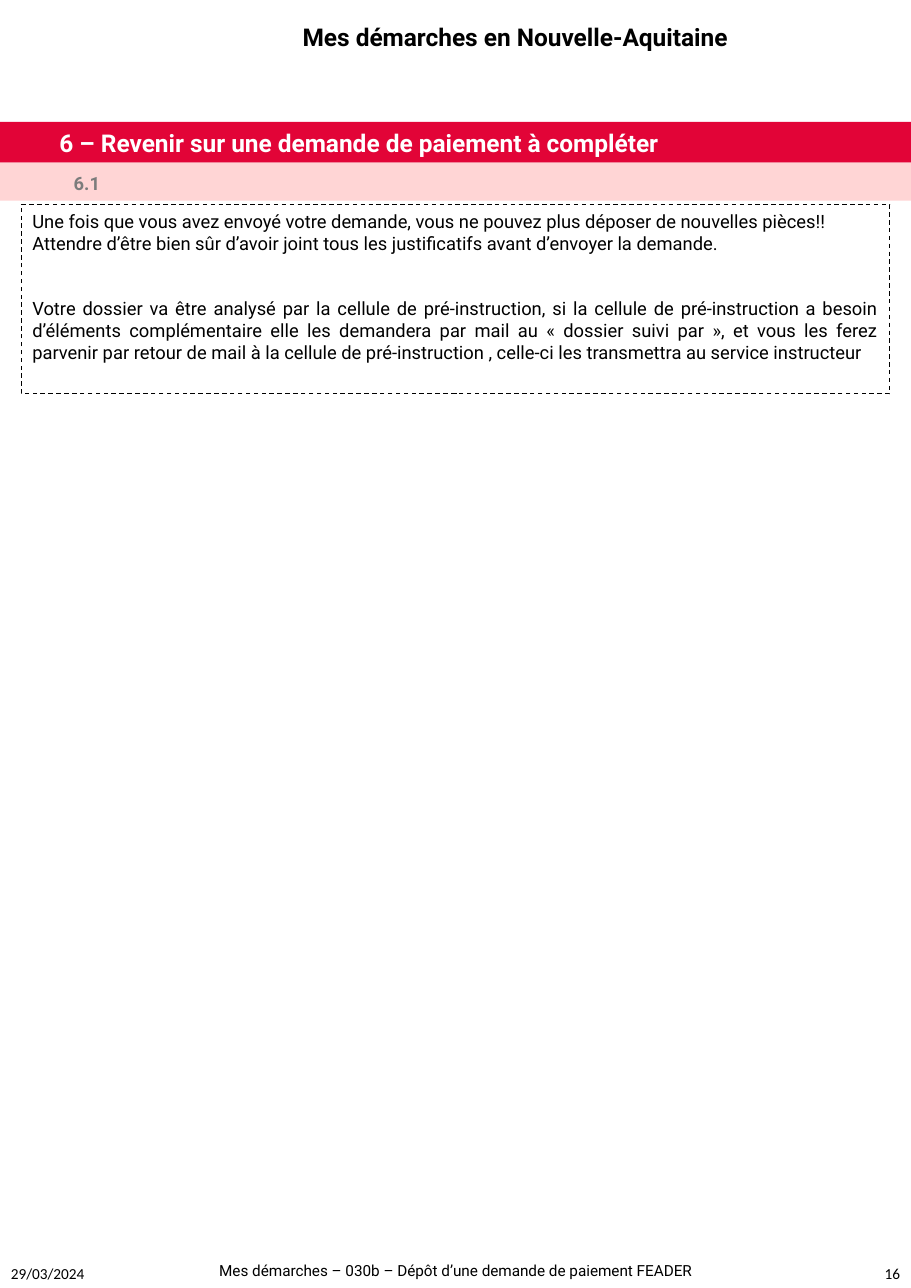
import pptx
import pptx.dml.color
import pptx.enum.dml
import pptx.enum.shapes
import pptx.enum.text
import pptx.oxml.ns
import pptx.util
from lxml import etree

Cm = pptx.util.Cm
Pt = pptx.util.Pt
ALIGN = pptx.enum.text.PP_ALIGN
ANCHOR = pptx.enum.text.MSO_ANCHOR

THEME = {
    "colors": {"black": "000000", "white": "FFFFFF", "red": "E20437",
               "pink": "FFD5D5", "grey": "7C7C7C"},
    "sizes": {"heading": Pt(16), "body": Pt(12), "footer": Pt(10)},
    "fonts": {"main": "Roboto", "footer": "Calibri"},
}


def color(name):
    return pptx.dml.color.RGBColor.from_string(THEME["colors"][name])


def write(shape, lines, size, ink="black", bold=False, font="main", frame_format=None, **paragraph_format):
    frame = shape.text_frame
    frame_values = {"word_wrap": True, "auto_size": pptx.enum.text.MSO_AUTO_SIZE.NONE,
                    "vertical_anchor": ANCHOR.TOP, **(frame_format or {})}
    for name, value in frame_values.items():
        setattr(frame, name, value)
    font_values = {"size": THEME["sizes"][size], "name": THEME["fonts"][font], "bold": bold}
    for index, (line, space_before) in enumerate(lines):
        paragraph = frame.add_paragraph() if index else frame.paragraphs[0]
        paragraph_values = {"alignment": ALIGN.LEFT, "space_before": Pt(space_before), **paragraph_format}
        for name, value in paragraph_values.items():
            setattr(paragraph, name, value)
        run = paragraph.add_run()
        run.text = line
        for name, value in font_values.items():
            setattr(run.font, name, value)
        run.font.color.rgb = color(ink)


presentation = pptx.Presentation()
presentation.slide_width = Cm(21)
presentation.slide_height = Cm(29.7)
slide = presentation.slides.add_slide(presentation.slide_layouts[1])
title, notice = slide.placeholders

header = slide.shapes.add_textbox(Cm(4.11), Cm(0.05), Cm(12.67), Cm(1.07))
no_margins = {f"margin_{side}": 0 for side in ("left", "top", "right", "bottom")}
write(header, [("Mes démarches en Nouvelle-Aquitaine", 0)], "heading", bold=True,
      frame_format=no_margins, alignment=ALIGN.RIGHT, line_spacing=Pt(32.4))

footers = [
    ("Mes démarches – 030b – Dépôt d’une demande de paiement FEADER",
     0.53, 28.96, 19.94, "main", ALIGN.CENTER),
    ("29/03/2024", 0, 29.03, 4.72, "footer", ALIGN.LEFT),
    ("16", 18.46, 29.03, 2.54, "footer", ALIGN.RIGHT),
]
for text, left, top, width, font, alignment in footers:
    footer = slide.shapes.add_textbox(Cm(left), Cm(top), Cm(width), Cm(0.69))
    write(footer, [(text, 0)], "footer", font=font, alignment=alignment)

placements = [(title, 0, 2.81, 21, 0.94), (notice, 0.49, 4.71, 20.02, 4.37)]
for placeholder, *box in placements:
    for name, value in zip(("left", "top", "width", "height"), box):
        setattr(placeholder, name, Cm(value))

title.fill.solid()
title.fill.fore_color.rgb = color("red")
write(title, [("6 – Revenir sur une demande de paiement à compléter", 0)], "heading", "white", True,
      frame_format={"margin_left": Cm(1.37), "vertical_anchor": ANCHOR.MIDDLE})

step_band = slide.shapes.add_shape(pptx.enum.shapes.MSO_SHAPE.RECTANGLE, 0, Cm(3.75), Cm(21), Cm(0.88))
step_band.shadow.inherit = False
step_band.fill.solid()
step_band.fill.fore_color.rgb = color("pink")
step_band.line.fill.background()

step_number = slide.shapes.add_textbox(Cm(1.45), Cm(3.84), Cm(19.02), Cm(0.76))
write(step_number, [("6.1", 0)], "body", "grey", True)

notice_lines = [
    ("Une fois que vous avez envoyé votre demande, vous ne pouvez plus déposer de nouvelles pièces!!", 0),
    ("Attendre d’être bien sûr d’avoir joint tous les justificatifs avant d’envoyer la demande.", 0),
    ("Votre dossier va être analysé par la cellule de pré-instruction, si la cellule de pré-instruction "
     "a besoin d’éléments complémentaire elle les demandera par mail au « dossier suivi par », et vous "
     "les ferez parvenir par retour de mail à la cellule de pré-instruction , celle-ci les transmettra "
     "au service instructeur", 28.5),
]
write(notice, notice_lines, "body", alignment=ALIGN.JUSTIFY)
for paragraph in notice.text_frame.paragraphs:
    properties = paragraph._p.get_or_add_pPr()
    for name in ("marL", "indent"):
        properties.set(name, "0")
    etree.SubElement(properties, pptx.oxml.ns.qn("a:buNone"))

notice.line.color.rgb = color("black")
outline_values = {"width": Pt(0.75), "dash_style": pptx.enum.dml.MSO_LINE.DASH}
for name, value in outline_values.items():
    setattr(notice.line, name, value)

presentation.save("out.pptx")
